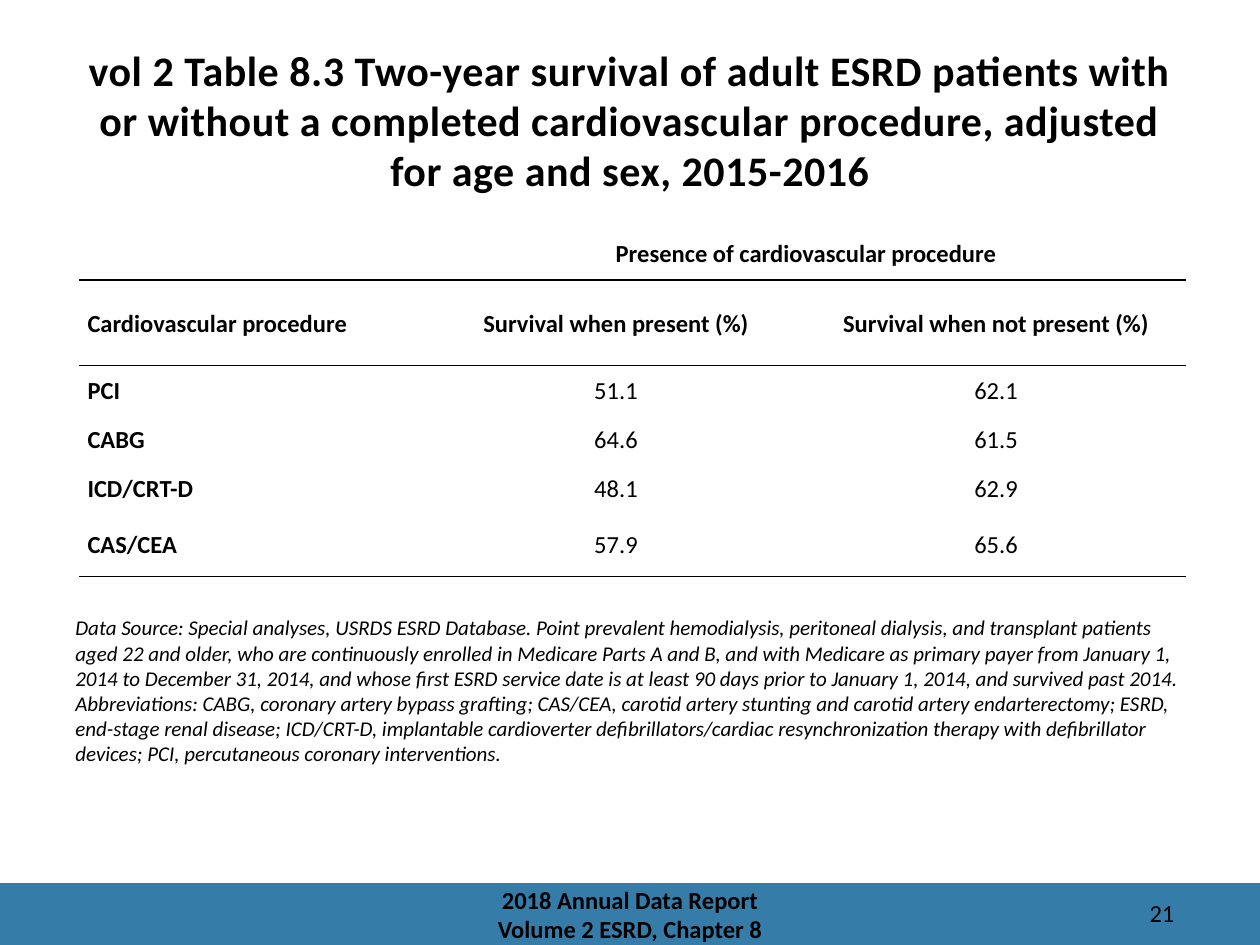
from lxml.etree import SubElement
from pptx import Presentation
from pptx.dml.color import RGBColor
from pptx.enum.shapes import MSO_SHAPE
from pptx.enum.text import MSO_ANCHOR, PP_ALIGN
from pptx.oxml.ns import qn
from pptx.util import Pt

BLACK = RGBColor(0x00, 0x00, 0x00)
BLUE = RGBColor(0x36, 0x7C, 0xA8)
FONT = "Calibri"

TITLE = (
    "vol 2 Table 8.3 Two-year survival of adult ESRD patients with or without "
    "a completed cardiovascular procedure, adjusted for age and sex, 2015-2016"
)
NOTE = (
    "Data Source: Special analyses, USRDS ESRD Database. Point prevalent "
    "hemodialysis, peritoneal dialysis, and transplant patients aged 22 and older, "
    "who are continuously enrolled in Medicare Parts A and B, and with Medicare as "
    "primary payer from January 1, 2014 to December 31, 2014, and whose first ESRD "
    "service date is at least 90 days prior to January 1, 2014, and survived past "
    "2014. Abbreviations: CABG, coronary artery bypass grafting; CAS/CEA, carotid "
    "artery stunting and carotid artery endarterectomy; ESRD, end-stage renal "
    "disease; ICD/CRT-D, implantable cardioverter defibrillators/cardiac "
    "resynchronization therapy with defibrillator devices; PCI, percutaneous "
    "coronary interventions."
)
FOOTER = "2018 Annual Data Report\vVolume 2 ESRD, Chapter 8"
ROWS = [
    ("", "Presence of cardiovascular procedure", ""),
    ("Cardiovascular procedure", "Survival when present (%)", "Survival when not present (%)"),
    ("PCI", "51.1", "62.1"),
    ("CABG", "64.6", "61.5"),
    ("ICD/CRT-D", "48.1", "62.9"),
    ("CAS/CEA", "57.9", "65.6"),
]
ROW_HEIGHTS = (31, 49, 28, 28, 28, 36.5)
COLUMN_WIDTHS = (198.4, 217.2, 217.2)
HEADER_ROWS = 2
RULED_ROWS = {0: ("b",), 1: ("t", "b"), 2: ("t",), 5: ("b",)}


def write_text(frame, text, size=14, bold=False, italic=False, align=PP_ALIGN.LEFT,
               anchor=MSO_ANCHOR.TOP, line_spacing=None, tracking=None):
    """Fill a text frame with one formatted paragraph."""
    frame.word_wrap = True
    frame.vertical_anchor = anchor
    para = frame.paragraphs[0]
    para.text = text
    para.alignment = align
    para.line_spacing = line_spacing
    for span in para.runs:
        span.font.name = FONT
        span.font.size = Pt(size)
        span.font.bold = bold
        span.font.italic = italic
        span.font.color.rgb = BLACK
        if tracking:
            span.font._element.set("spc", str(tracking))


def place(shape, left, top, width, height):
    """Move and size a shape in points."""
    shape.left, shape.top = Pt(left), Pt(top)
    shape.width, shape.height = Pt(width), Pt(height)


def add_title(page):
    """Place the title in its placeholder."""
    title = page.shapes.title
    place(title, 36, 21.6, 648, 90)
    write_text(title.text_frame, TITLE, size=24, bold=True, align=PP_ALIGN.CENTER, tracking=30)


def add_text_box(page, left, top, width, height, text, **style):
    """Add a wrapped text box."""
    box = page.shapes.add_textbox(Pt(left), Pt(top), Pt(width), Pt(height))
    write_text(box.text_frame, text, **style)


def add_band(page):
    """Add the coloured band along the foot of the page."""
    band = page.shapes.add_shape(MSO_SHAPE.RECTANGLE, Pt(0), Pt(504.7), Pt(720), Pt(35.3))
    band.shadow.inherit = False
    band.fill.solid()
    band.fill.fore_color.rgb = BLUE
    band.line.fill.background()


def add_rules(cell, ruled_sides):
    """Draw one-point rules on the given sides and clear the others."""
    properties = cell._tc.get_or_add_tcPr()
    for side in "lrtb":
        ruled = side in ruled_sides
        width = str(Pt(1)) if ruled else "0"
        line = SubElement(properties, qn(f"a:ln{side.upper()}"), w=width)
        fill = SubElement(line, qn("a:solidFill" if ruled else "a:noFill"))
        if ruled:
            SubElement(fill, qn("a:srgbClr"), val=str(BLACK))


def format_cell(cell, text, row, column):
    """Write one table cell with its alignment, weight and rules."""
    add_rules(cell, RULED_ROWS.get(row, ()))
    cell.fill.background()
    cell.margin_left = cell.margin_right = Pt(5)
    cell.margin_top = cell.margin_bottom = Pt(0)
    cell.vertical_anchor = MSO_ANCHOR.MIDDLE
    if text:
        write_text(
            cell.text_frame, text, bold=row < HEADER_ROWS or column == 0,
            align=PP_ALIGN.CENTER if column else PP_ALIGN.LEFT,
            anchor=MSO_ANCHOR.MIDDLE, line_spacing=1.07,
        )


def add_survival_table(page):
    """Add the table of survival by procedure."""
    table = page.shapes.add_table(
        len(ROWS), len(COLUMN_WIDTHS), Pt(45), Pt(129),
        Pt(sum(COLUMN_WIDTHS)), Pt(sum(ROW_HEIGHTS)),
    ).table
    table.first_row = table.horz_banding = False
    for column, width in zip(table.columns, COLUMN_WIDTHS):
        column.width = Pt(width)
    for row, height in zip(table.rows, ROW_HEIGHTS):
        row.height = Pt(height)
    for row, texts in enumerate(ROWS):
        for column, text in enumerate(texts):
            format_cell(table.cell(row, column), text, row, column)
    table.cell(0, 1).merge(table.cell(0, 2))


def main():
    """Build and save the slide."""
    deck = Presentation()
    deck.slide_width, deck.slide_height = Pt(720), Pt(540)
    page = deck.slides.add_slide(deck.slide_layouts[5])
    add_band(page)
    add_text_box(page, 606.2, 509.8, 72, 21.6, "21", align=PP_ALIGN.RIGHT)
    add_title(page)
    add_survival_table(page)
    add_text_box(page, 238.3, 504.7, 243.4, 35.3, FOOTER, bold=True,
                 align=PP_ALIGN.CENTER, anchor=MSO_ANCHOR.MIDDLE)
    add_text_box(page, 36, 347.8, 648, 94.3, NOTE, size=12, italic=True)
    deck.save("out.pptx")


if __name__ == "__main__":
    main()
